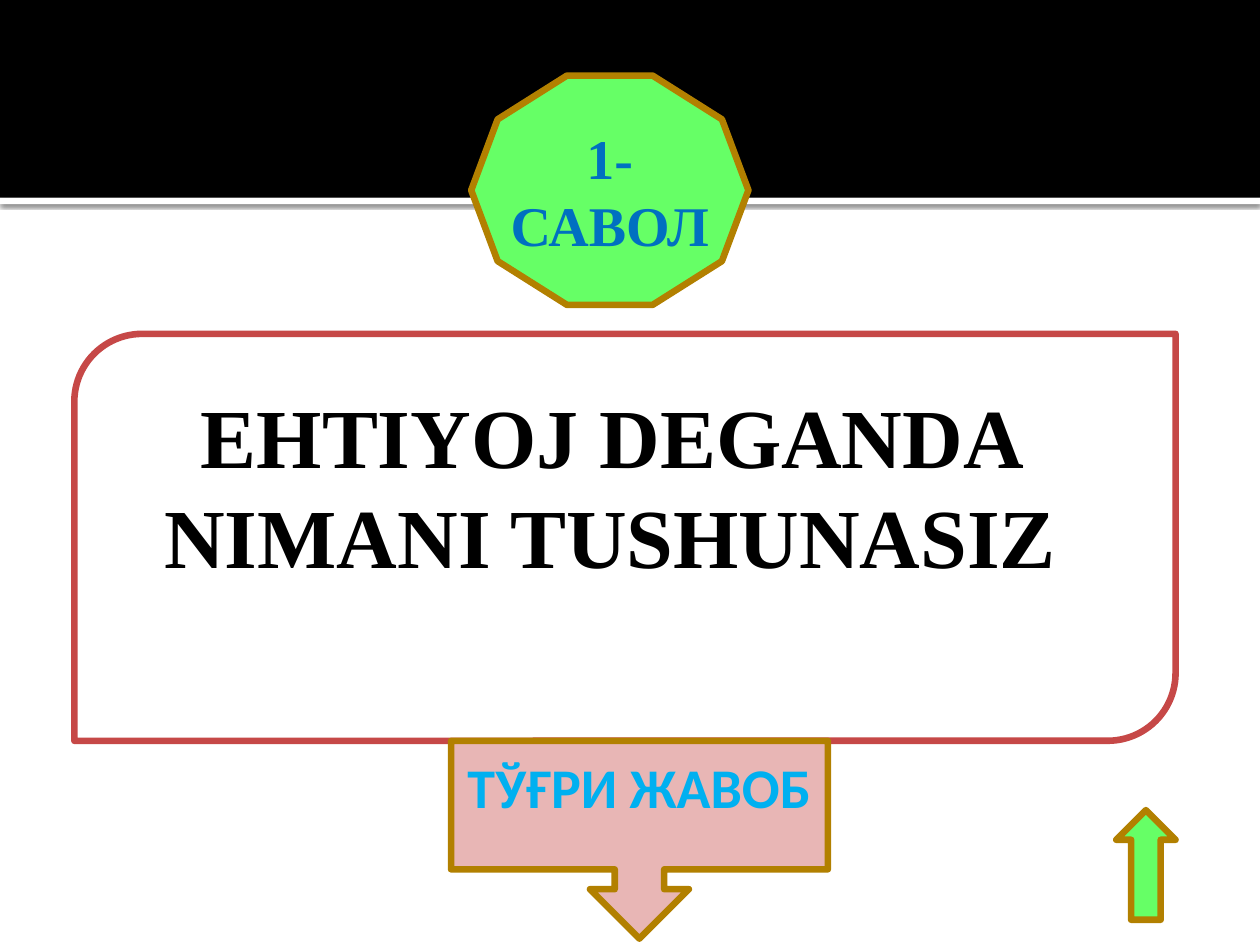
from lxml import etree
from pptx import Presentation
from pptx.dml.color import RGBColor
from pptx.enum.shapes import MSO_SHAPE
from pptx.enum.text import MSO_ANCHOR, PP_ALIGN
from pptx.oxml.ns import qn
from pptx.util import Inches, Pt

RECT = MSO_SHAPE.RECTANGLE
FRAME = MSO_SHAPE.ROUND_2_DIAG_RECTANGLE
BADGE = MSO_SHAPE.DECAGON
UP = MSO_SHAPE.UP_ARROW
CALLOUT = MSO_SHAPE.DOWN_ARROW_CALLOUT
MIDDLE = MSO_ANCHOR.MIDDLE
CENTER = PP_ALIGN.CENTER

COLORS = {
    "white": "FFFFFF", "black": "000000", "red": "C64847", "green": "66FF66",
    "gold": "B28000", "pink": "E8B6B5", "blue": "0070C0", "sky": "00B0F0",
}
SERIF, SANS = "Times New Roman", "Calibri"
BORDER = 3.78

# Content: (kind, box, fill, line), then (text, font, size, color)
STRIP = (RECT, (0, 1.57, 10, 0.05), "white", None)
BAND = (RECT, (0, 0, 10, 1.57), "black", None)
PANEL = (FRAME, (0.59, 2.65, 8.74, 3.23), "white", "red")
NUMBER = (BADGE, (3.74, 0.6, 2.2, 1.82), "green", "gold")
BACK = (UP, (8.86, 6.43, 0.47, 0.87), "green", "gold")
ANSWER = (CALLOUT, (3.58, 5.88, 2.99, 1.57), "pink", "gold")
ASK_BOX = (0.83, 3, 8.03, 1.72)

ASK_TEXT = ("EHTIYOJ DEGANDA NIMANI TUSHUNASIZ", SERIF, 48, "black")
NUMBER_TEXT = ("1-САВОЛ", SERIF, 32, "blue")
ANSWER_TEXT = ("ТЎҒРИ ЖАВОБ", SANS, 32, "sky")


def color(name):
    return RGBColor.from_string(COLORS[name])


def draw(slide, kind, box, fill, line):
    shape = slide.shapes.add_shape(kind, *map(Inches, box))
    shape.shadow.inherit = False
    shape.fill.solid()
    shape.fill.fore_color.rgb = color(fill)
    if line:
        shape.line.color.rgb = color(line)
        shape.line.width = Pt(BORDER)
    else:
        shape.line.fill.background()
    return shape


def write(shape, text, font, size, tint):
    frame = shape.text_frame
    frame.word_wrap = True
    para = frame.paragraphs[0]
    para.text = text
    para.alignment = CENTER
    para.font.name = font
    para.font.size = Pt(size)
    para.font.bold = True
    para.font.color.rgb = color(tint)
    return frame


def shade(shape, blur, dist, alpha):
    effects = shape._element.spPr.find(qn("a:effectLst"))
    outer = etree.SubElement(effects, qn("a:outerShdw"), blurRad=str(Pt(blur)),
                             dist=str(Pt(dist)), dir="5400000", algn="t", rotWithShape="0")
    tint = etree.SubElement(outer, qn("a:srgbClr"), val=COLORS["black"])
    etree.SubElement(tint, qn("a:alpha"), val=str(alpha * 1000))


def main():
    deck = Presentation()
    deck.slide_width, deck.slide_height = Inches(10), Inches(7.5)
    slide = deck.slides.add_slide(deck.slide_layouts[6])

    # Header band with its shaded lower edge
    shade(draw(slide, *STRIP), 2.5, 0.8, 60)
    draw(slide, *BAND)

    # Question
    draw(slide, *PANEL)
    write(slide.shapes.add_textbox(*map(Inches, ASK_BOX)), *ASK_TEXT)
    write(draw(slide, *NUMBER), *NUMBER_TEXT).vertical_anchor = MIDDLE

    # Back arrow and answer callout, whose label sits above the middle
    draw(slide, *BACK)
    frame = write(draw(slide, *ANSWER), *ANSWER_TEXT)
    frame.vertical_anchor = MIDDLE
    frame.margin_bottom = Inches(0.35)

    deck.save("out.pptx")


if __name__ == "__main__":
    main()
